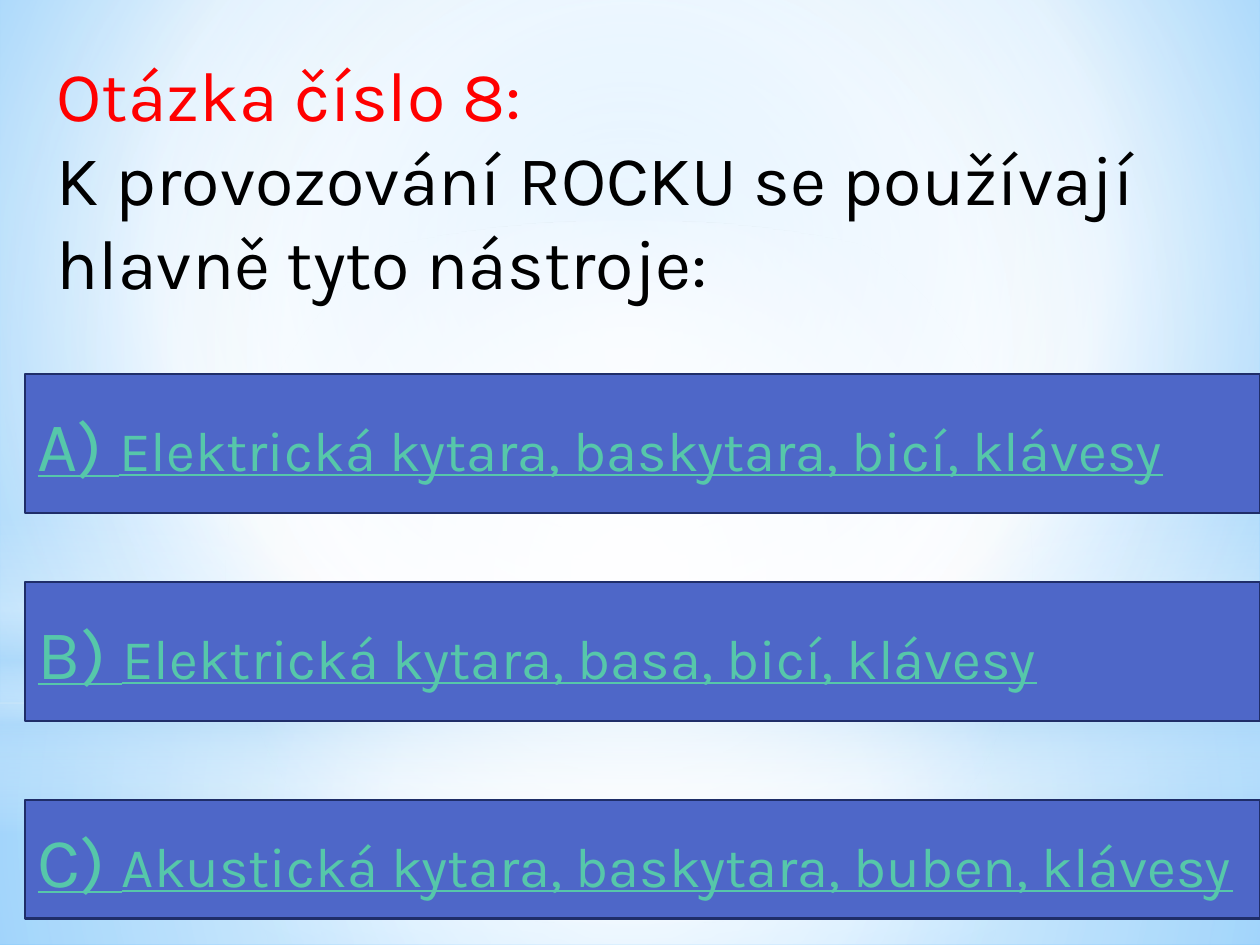
from lxml import etree
from pptx import Presentation
from pptx.dml.color import RGBColor
from pptx.enum.shapes import MSO_SHAPE
from pptx.enum.text import MSO_ANCHOR, PP_ALIGN
from pptx.oxml.ns import qn
from pptx.util import Pt

RECT, OVAL = MSO_SHAPE.RECTANGLE, MSO_SHAPE.OVAL
LEFT, TOP, MIDDLE = PP_ALIGN.LEFT, MSO_ANCHOR.TOP, MSO_ANCHOR.MIDDLE
FONT = "Karla"
W, H = 720, 540
CENTER = (50, 50, 50, 50)

HEADING = "Otázka číslo 8:"
QUESTION = ["K provozování ROCKU se používají", "hlavně tyto nástroje:"]
# letter, answer, top, height
ANSWERS = [
    ("A) ", "Elektrická kytara, baskytara, bicí, klávesy", 213.84, 79.2),
    ("B) ", "Elektrická kytara, basa, bicí, klávesy", 332.64, 79.2),
    ("C) ", "Akustická kytara, baskytara, buben, klávesy", 457.2, 67.68),
]
# gradient stops: position %, colour, opacity %
SKY = [(0, "9ED5FF", 100), (60, "FFFFFF", 100), (100, "5BB9FF", 100)]
# shape, top, height, stops, focus of a radial gradient (None: vertical)
GLOWS = [
    (RECT, 401.76, 138.24,
     [(0, "FFFFFF", 91), (37, "FFFFFF", 76), (100, "B4DCFA", 79)], CENTER),
    (RECT, 0, 401.76,
     [(0, "FFFFFF", 89), (48, "FFFFFF", 62), (100, "B4DCFA", 79)], CENTER),
    (RECT, 296.64, 180,
     [(0, "FFFFFF", 0), (29, "FFFFFF", 30), (45, "B4DCFA", 40),
      (55, "FFFFFF", 26), (65, "B4DCFA", 60), (100, "FFFFFF", 0)], None),
    (OVAL, 126, 401.76, [(0, "FFFFFF", 100), (56, "FFFFFF", 0)], CENTER),
]


def rgb(color):
    return RGBColor.from_string(color)


def set_gradient(fill, root, stops, focus):
    """Fill with stops that carry opacity, radial around focus or vertical."""
    fill.gradient()
    grad = root.find(".//" + qn("a:gradFill"))
    for child in list(grad):
        grad.remove(child)
    gs_list = etree.SubElement(grad, qn("a:gsLst"))
    for pos, color, opacity in stops:
        gs = etree.SubElement(gs_list, qn("a:gs"), pos=str(pos * 1000))
        clr = etree.SubElement(gs, qn("a:srgbClr"), val=color)
        if opacity < 100:
            etree.SubElement(clr, qn("a:alpha"), val=str(opacity * 1000))
    if focus:
        radial = etree.SubElement(grad, qn("a:path"), path="circle")
        sides = {side: str(v * 1000) for side, v in zip("ltrb", focus)}
        etree.SubElement(radial, qn("a:fillToRect"), **sides)
    else:
        etree.SubElement(grad, qn("a:lin"), ang="5400000", scaled="0")


def add_text(p, text, size=40, color="000000", underline=False):
    r = p.add_run()
    r.text = text
    r.font.name = FONT
    r.font.size = Pt(size)
    r.font.color.rgb = rgb(color)
    r.font.underline = underline


def add_box(slide, kind, left, top, width, height):
    sp = slide.shapes.add_shape(kind, Pt(left), Pt(top), Pt(width), Pt(height))
    sp.shadow.inherit = False
    return sp


def add_title(slide):
    title = slide.shapes.title
    title.left, title.top = Pt(25.2), Pt(25.92)
    title.width, title.height = Pt(652.32), Pt(200.88)
    slide.shapes._spTree.append(title._element)  # in front of the glows
    tf = title.text_frame
    tf.word_wrap = True
    tf.vertical_anchor = TOP
    p = tf.paragraphs[0]
    p.alignment = LEFT
    add_text(p, HEADING, color="FF0000")
    for line in QUESTION:
        p.add_line_break()
        add_text(p, line)


def add_answer(slide, letter, answer, top, height):
    sp = add_box(slide, RECT, 14.4, top, W - 14.4, height)
    sp.fill.solid()
    sp.fill.fore_color.rgb = rgb("4E67C8")
    sp.line.color.rgb = rgb("1F2E69")
    sp.line.width = Pt(1.25)
    tf = sp.text_frame
    tf.word_wrap = True
    tf.vertical_anchor = MIDDLE
    p = tf.paragraphs[0]
    p.alignment = LEFT
    for text, size in ((letter, 40), (answer, 32)):
        add_text(p, text, size=size, color="56C7AA", underline=True)


def main():
    prs = Presentation()
    prs.slide_width, prs.slide_height = Pt(W), Pt(H)
    slide = prs.slides.add_slide(prs.slide_layouts[5])
    set_gradient(slide.background.fill, slide._element, SKY, (20, 10, 20, 60))
    for kind, top, height, stops, focus in GLOWS:
        sp = add_box(slide, kind, 0, top, W, height)
        sp.line.fill.background()
        set_gradient(sp.fill, sp._element, stops, focus)
    add_title(slide)
    for answer in ANSWERS:
        add_answer(slide, *answer)
    prs.save("out.pptx")


if __name__ == "__main__":
    main()
